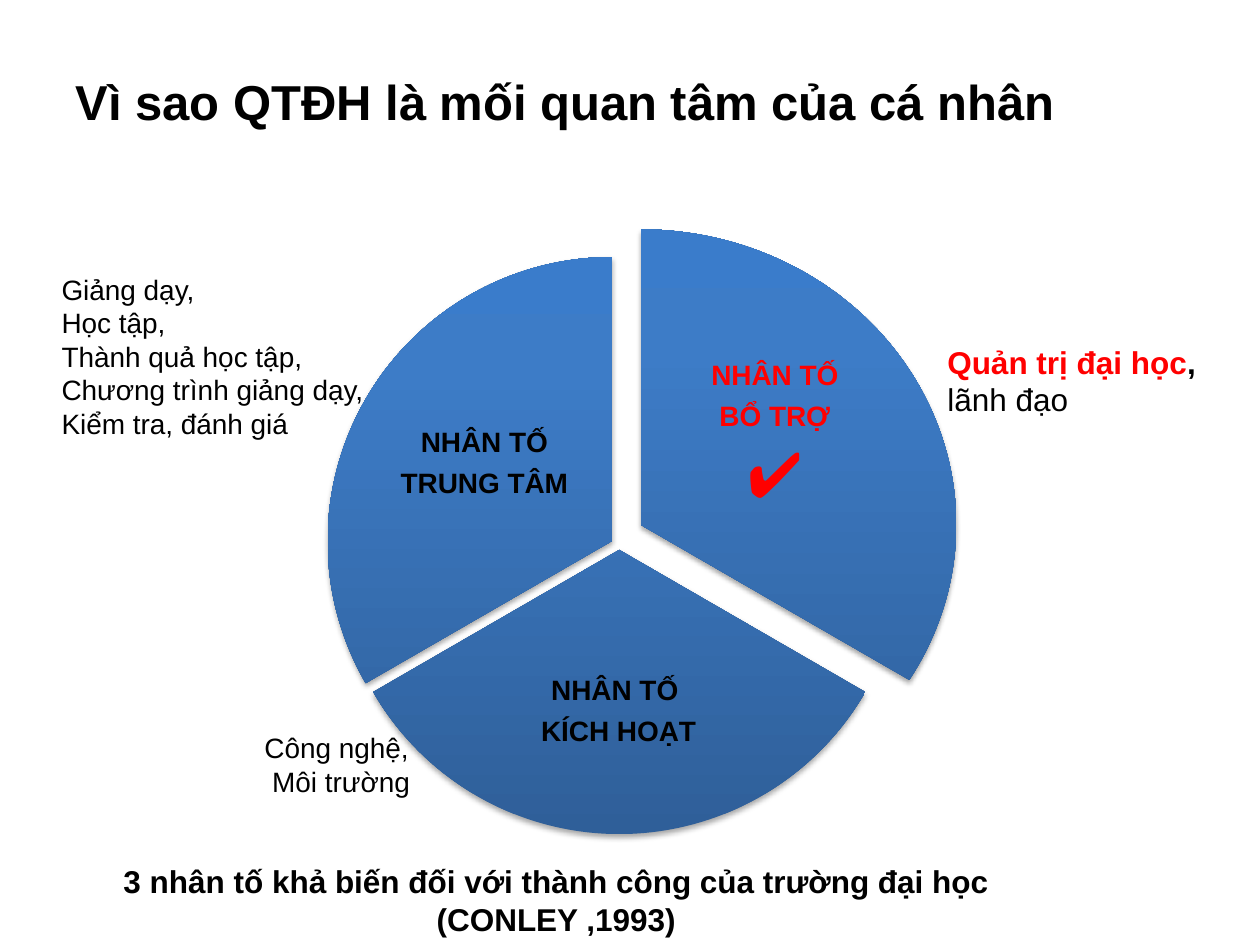
from lxml import etree
from pptx import Presentation
from pptx.dml.color import RGBColor
from pptx.enum.shapes import MSO_SHAPE
from pptx.enum.text import MSO_ANCHOR, MSO_AUTO_SIZE, PP_ALIGN
from pptx.oxml import parse_xml
from pptx.util import Inches, Pt

PIE = MSO_SHAPE.PIE
TOP, MID = MSO_ANCHOR.TOP, MSO_ANCHOR.MIDDLE
LEFT, MID_X = PP_ALIGN.LEFT, PP_ALIGN.CENTER
GROW, FIXED = MSO_AUTO_SIZE.SHAPE_TO_FIT_TEXT, MSO_AUTO_SIZE.NONE

FONT = "Arial"
HUES = {"ink": "000000", "red": "FF0000", "deep": "2F5F99",
        "mid": "3D7CC7", "light": "3A7CCB"}
STOPS = [(0, "deep"), (80, "mid"), (100, "light")]
NS = 'xmlns:a="http://schemas.openxmlformats.org/drawingml/2006/main"'

# Each run is (text, size, hue, bold); each paragraph is a list of runs.
TITLE = [[("Vì sao QTĐH là mối quan tâm của cá nhân", 28, "ink", True)]]
PARTS = [
    {"pie": (2.58, 1.82, 5.01, 4.69), "turn": (162, 18),
     "box": (5.3, 2.68, 1.7, 1.56),
     "text": [[("NHÂN TỐ", 16, "red", True)], [("BỔ TRỢ", 16, "red", True)],
              [("✔", 36, "red", True)]]},
    {"pie": (2.66, 2.11, 4.51, 4.51), "turn": (18, 90),
     "box": (3.89, 4.95, 2.04, 1.4),
     "text": [[("NHÂN TỐ ", 16, "ink", True)],
              [("KÍCH HOẠT", 16, "ink", True)]]},
    {"pie": (2.6, 2.04, 4.51, 4.51), "turn": (90, 162),
     "box": (3.08, 2.93, 1.53, 1.5),
     "text": [[("NHÂN TỐ", 16, "ink", True)],
              [("TRUNG TÂM", 16, "ink", True)]]},
]
NOTES = [
    ((0.39, 2.11, 2.73, 1.72), LEFT,
     [[(line, 16, "ink", False)] for line in (
         "Giảng dạy,", "Học tập,", "Thành quả học tập,",
         "Chương trình giảng dạy, Kiểm tra, đánh giá")]),
    ((2, 5.75, 3.58, 0.64), LEFT,
     [[(line, 16, "ink", False)] for line in ("Công nghệ,", " Môi trường")]),
    ((7.42, 2.67, 2.58, 1.01), LEFT,
     [[("Quản trị đại học", 18, "red", True), (", ", 18, "ink", True),
       ("lãnh đạo", 18, "ink", False)]]),
    ((0.86, 6.79, 7.11, 0.71), MID_X,
     [[(line, 18, "ink", True)] for line in (
         "3 nhân tố khả biến đối với thành công của trường đại học",
         "(CONLEY ,1993)")]),
]


def place(box):
    """Turn a box in inches into lengths."""
    return [Inches(n) for n in box]


def put(item, values):
    """Set each attribute of an item from a dict."""
    for key, value in values.items():
        setattr(item, key, value)


def write(frame, paras, look, style):
    """Fill a text frame with styled paragraphs."""
    put(frame, {"word_wrap": True, **look})
    for i, runs in enumerate(paras):
        para = frame.add_paragraph() if i else frame.paragraphs[0]
        put(para, style)
        for text, size, hue, bold in runs:
            run = para.add_run()
            run.text = text
            put(run.font, {"name": FONT, "size": Pt(size), "bold": bold})
            run.font.color.rgb = RGBColor.from_string(HUES[hue])


def add_pie(group, box, turn):
    """Add one slice with its gradient and soft shadow."""
    pie = group.shapes.add_shape(PIE, *place(box))
    for i, angle in enumerate(turn):
        pie.adjustments[i] = angle
    pie.line.fill.background()
    pie.shadow.inherit = False
    pie.fill.gradient()
    pie.fill.gradient_angle = 90
    stops = pie._element.spPr.find(".//{*}gsLst")
    for stop in list(stops):
        stops.remove(stop)
    for at, hue in STOPS:
        stops.append(parse_xml(f'<a:gs {NS} pos="{at * 1000}">'
                               f'<a:srgbClr val="{HUES[hue]}"/></a:gs>'))
    glow = pie._element.spPr.find("{*}effectLst")
    glow.append(etree.fromstring(
        f'<a:outerShdw {NS} blurRad="{Pt(3.1)}" dist="{Pt(1.8)}" dir="5400000" '
        f'rotWithShape="0"><a:srgbClr val="{HUES["ink"]}">'
        '<a:alpha val="35000"/></a:srgbClr></a:outerShdw>'))


def main():
    """Build the slide and save it."""
    deck = Presentation()
    put(deck, {"slide_width": Inches(10), "slide_height": Inches(7.5)})
    slide = deck.slides.add_slide(deck.slide_layouts[5])
    title = slide.shapes.title
    put(title, dict(zip(("left", "top", "width", "height"),
                        place((0.5, 0.52, 9, 0.87)))))
    write(title.text_frame, TITLE, {"vertical_anchor": TOP, "auto_size": FIXED},
          {"alignment": LEFT})
    group = slide.shapes.add_group_shape()
    inset = {f"margin_{side}": Inches(0.02)
             for side in ("left", "top", "right", "bottom")}
    for part in PARTS:
        add_pie(group, part["pie"], part["turn"])
        label = group.shapes.add_textbox(*place(part["box"]))
        write(label.text_frame, part["text"], {"vertical_anchor": MID, **inset},
              {"alignment": MID_X, "line_spacing": 0.9, "space_after": Pt(6)})
    for box, align, text in NOTES:
        note = slide.shapes.add_textbox(*place(box))
        write(note.text_frame, text, {"auto_size": GROW}, {"alignment": align})
    deck.save("out.pptx")


if __name__ == "__main__":
    main()
